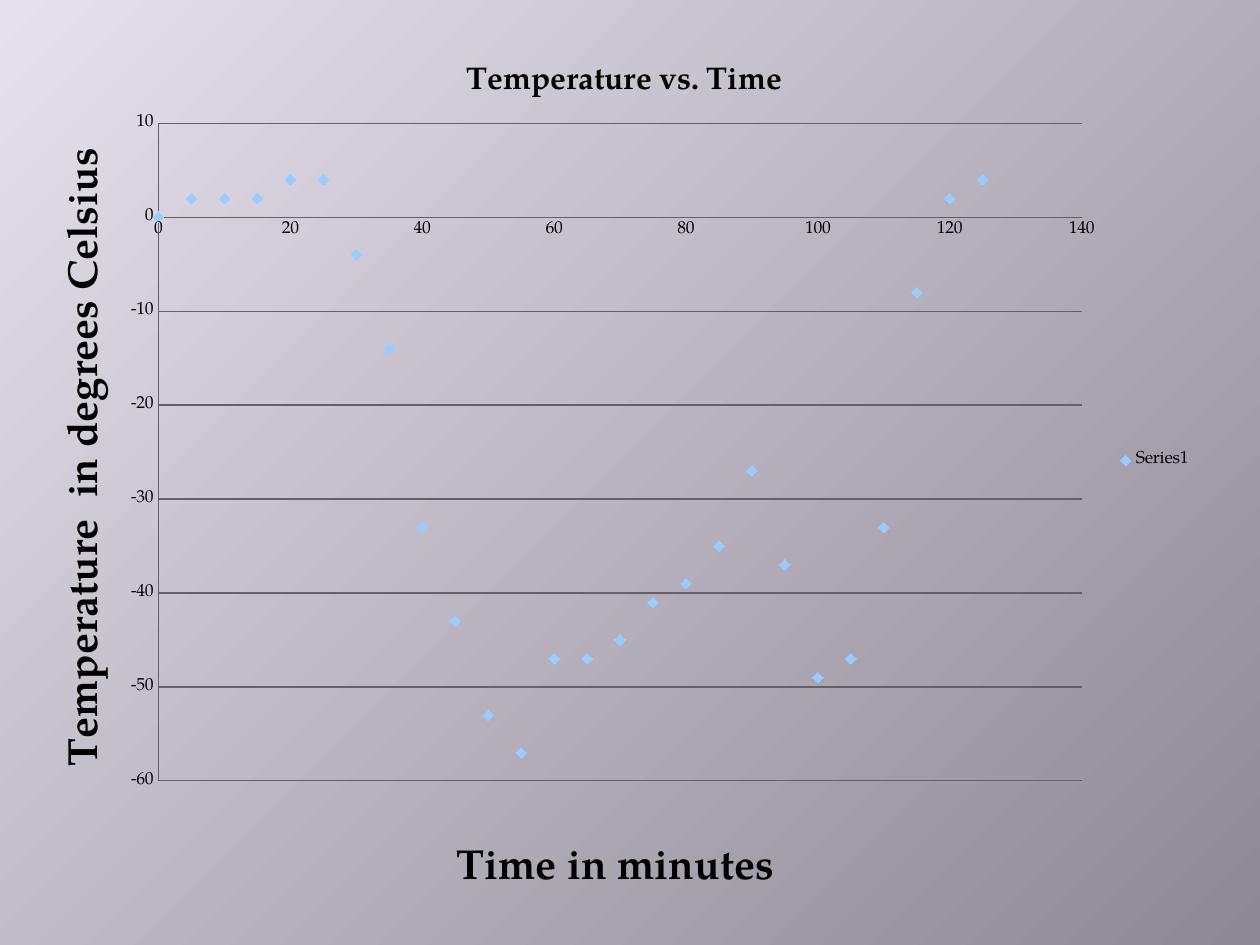
from dataclasses import dataclass

import pptx
import pptx.chart.data
import pptx.dml.color
import pptx.enum.chart
import pptx.oxml
import pptx.util
from pptx.oxml.ns import nsdecls

Pt = pptx.util.Pt


@dataclass(frozen=True)
class Theme:
    font: str = "TeX Gyre Pagella"
    text: str = "000000"
    line: str = "665F66"
    marker: str = "99CCFF"
    background: tuple = ("E6E1EC", "8E8895")
    label_size: int = 10
    title_size: int = 18
    axis_title_size: int = 24


THEME = Theme()

MINUTES_STEP = 5
TEMPERATURES = [0, 2, 2, 2, 4, 4, -4, -14, -33, -43, -53, -57, -47,
                -47, -45, -41, -39, -35, -27, -37, -49, -47, -33, -8, 2, 4]


def color(value):
    return pptx.dml.color.RGBColor.from_string(value)


def write_text(text_frame, text, size, bold=False):
    paragraph = text_frame.paragraphs[0]
    run = paragraph.add_run()
    run.text = text
    run.font.name = THEME.font
    run.font.size = Pt(size)
    run.font.bold = bold
    run.font.color.rgb = color(THEME.text)


def paint_background(slide):
    fill = slide.background.fill
    fill.gradient()
    fill.gradient_angle = 315
    for stop, value, position in zip(fill.gradient_stops, THEME.background, (0, 1)):
        stop.color.rgb = color(value)
        stop.position = position


def place(element, index, target="", **fractions):
    """Give a chart part a manual layout, in fractions of the chart."""
    for layout in element.xpath("c:layout"):
        element.remove(layout)
    target_xml = f'<c:layoutTarget val="{target}"/>' if target else ""
    modes = "".join(f'<c:{key}Mode val="edge"/>' for key in "xy")
    values = "".join(f'<c:{key} val="{value}"/>' for key, value in fractions.items())
    element.insert(index, pptx.oxml.parse_xml(
        f'<c:layout {nsdecls("c")}><c:manualLayout>{target_xml}{modes}{values}'
        "</c:manualLayout></c:layout>"))


def format_axis(axis, title, low, high, step):
    axis.minimum_scale, axis.maximum_scale, axis.major_unit = low, high, step
    axis.major_tick_mark = axis.minor_tick_mark = pptx.enum.chart.XL_TICK_MARK.NONE
    axis.tick_label_position = pptx.enum.chart.XL_TICK_LABEL_POSITION.NEXT_TO_AXIS
    axis.tick_labels.font.size = Pt(THEME.label_size)
    axis.has_major_gridlines = False
    style_line(axis.format.line)
    write_text(axis.axis_title.text_frame, title, THEME.axis_title_size, bold=True)


def style_line(line):
    line.color.rgb = color(THEME.line)
    line.width = Pt(0.75)


def format_series(series):
    series.format.line.fill.background()
    series.marker.style = pptx.enum.chart.XL_MARKER_STYLE.DIAMOND
    series.marker.size = 6
    series.marker.format.fill.solid()
    series.marker.format.fill.fore_color.rgb = color(THEME.marker)
    series.marker.format.line.fill.background()


def add_scatter_chart(slide):
    data = pptx.chart.data.XyChartData()
    points = data.add_series("Series1")
    for index, temperature in enumerate(TEMPERATURES):
        points.add_data_point(index * MINUTES_STEP, temperature)
    chart = slide.shapes.add_chart(
        pptx.enum.chart.XL_CHART_TYPE.XY_SCATTER,
        Pt(18), Pt(18), Pt(672), Pt(498), data).chart
    chart.font.name = THEME.font
    chart.font.size = Pt(THEME.label_size)
    chart.font.color.rgb = color(THEME.text)
    chart.plots[0].vary_by_categories = False
    format_series(chart.plots[0].series[0])

    # Titles, axes and grid
    chart.has_title = True
    write_text(chart.chart_title.text_frame, "Temperature vs. Time",
               THEME.title_size, bold=True)
    time_axis, temperature_axis = chart.category_axis, chart.value_axis
    format_axis(time_axis, "Time in minutes", 0, 140, 20)
    format_axis(temperature_axis, "Temperature  in degrees Celsius", -60, 10, 10)
    temperature_axis.has_major_gridlines = True
    style_line(temperature_axis.major_gridlines.format.line)
    for body in temperature_axis.axis_title.element.xpath(".//a:bodyPr"):
        body.set("rot", "-5400000")
        body.set("vert", "horz")

    # Legend
    chart.has_legend = True
    chart.legend.position = pptx.enum.chart.XL_LEGEND_POSITION.RIGHT
    chart.legend.include_in_layout = False
    chart.legend.font.size = Pt(THEME.label_size)

    # Positions inside the chart
    place(chart.element.xpath(".//c:plotArea")[0], 0, "inner",
          x=0.108, y=0.106, w=0.785, h=0.759)
    place(chart.element.xpath(".//c:legend")[0], 1, x=0.92, y=0.475, w=0.07, h=0.04)
    place(chart.chart_title.element, 1, x=0.365, y=0.03)
    place(time_axis.axis_title.element, 1, x=0.355, y=0.93)
    place(temperature_axis.axis_title.element, 1, x=0.02, y=0.13)


def main():
    presentation = pptx.Presentation()
    presentation.slide_width, presentation.slide_height = Pt(720), Pt(540)
    slide = presentation.slides.add_slide(presentation.slide_layouts[6])
    paint_background(slide)
    add_scatter_chart(slide)
    presentation.save("out.pptx")


if __name__ == "__main__":
    main()
